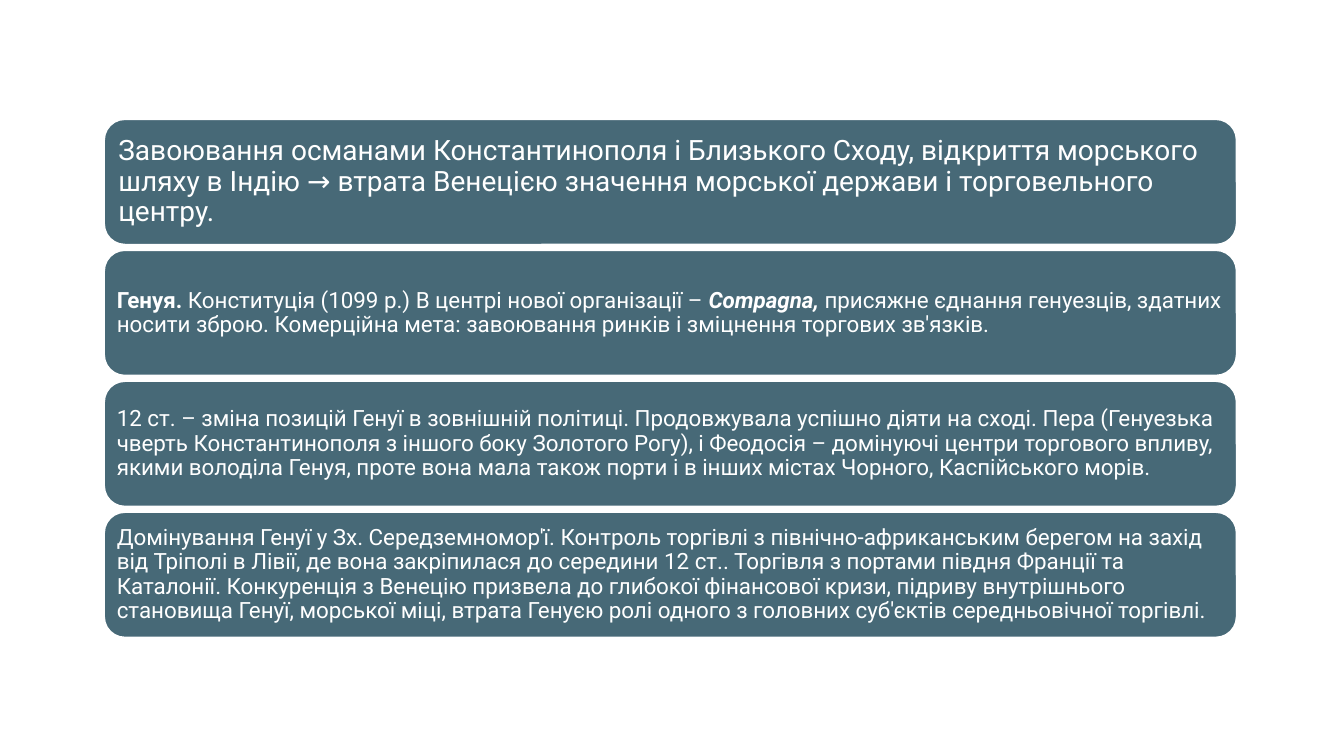
import pptx
import pptx.util
import pptx.dml.color
import pptx.enum.shapes
import pptx.enum.text

Cm = pptx.util.Cm
Pt = pptx.util.Pt
COLORS = {
    name: pptx.dml.color.RGBColor.from_string(value)
    for name, value in {"card": "476977", "white": "FFFFFF"}.items()
}

LEFT, TOP, WIDTH, HEIGHT, PITCH = 2.62, 3.0, 28.55, 3.17, 3.3

cards = [
    (20, 0.21, [
        ("Завоювання османами Константинополя і Близького Сходу, відкриття морського "
         "шляху в Індію → втрата Венецією значення морської держави і торговельного "
         "центру.", False, False),
    ]),
    (16, 0.17, [
        ("Генуя.", True, False),
        (" Конституція (1099 р.) В центрі нової організації – ", False, False),
        ("Compagna,", True, True),
        (" присяжне єднання генуезців, здатних носити зброю. Комерційна мета: "
         "завоювання ринків і зміцнення торгових зв'язків.", False, False),
    ]),
    (16, 0.17, [
        ("12 ст. – зміна позицій Генуї в зовнішній політиці. Продовжувала успішно діяти "
         "на сході. Пера (Генуезька чверть Константинополя з іншого боку Золотого Рогу), "
         "і Феодосія – домінуючі центри торгового впливу, якими володіла Генуя, проте "
         "вона мала також порти і в інших містах Чорного, Каспійського морів.",
         False, False),
    ]),
    (16, 0.17, [
        ("Домінування Генуї у Зх. Середземномор'ї. Контроль торгівлі з "
         "північно-африканським берегом на захід від Тріполі в Лівії, де вона "
         "закріпилася до середини 12 ст.. Торгівля з портами півдня Франції та "
         "Каталонії. Конкуренція з Венецію призвела до глибокої фінансової кризи, "
         "підриву внутрішнього становища Генуї, морської міці, втрата Генуєю ролі "
         "одного з головних суб'єктів середньовічної торгівлі.", False, False),
    ]),
]

presentation = pptx.Presentation()
presentation.slide_width = Cm(33.87)
presentation.slide_height = Cm(19.05)
slide = presentation.slides.add_slide(presentation.slide_layouts[6])

for index, (size, inset, parts) in enumerate(cards):
    shape = slide.shapes.add_shape(
        pptx.enum.shapes.MSO_SHAPE.ROUNDED_RECTANGLE,
        Cm(LEFT), Cm(TOP + index * PITCH), Cm(WIDTH), Cm(HEIGHT))
    shape.shadow.inherit = False
    shape.fill.solid()
    shape.fill.fore_color.rgb = COLORS["card"]
    shape.line.color.rgb = COLORS["white"]
    shape.line.width = Pt(1.5)

    text_frame = shape.text_frame
    text_frame.word_wrap = True
    text_frame.vertical_anchor = pptx.enum.text.MSO_ANCHOR.MIDDLE
    text_frame.margin_left = text_frame.margin_right = Cm(inset)
    text_frame.margin_top = text_frame.margin_bottom = Cm(inset)

    paragraph = text_frame.paragraphs[0]
    paragraph.alignment = pptx.enum.text.PP_ALIGN.LEFT
    paragraph.line_spacing = 0.9
    for text, bold, italic in parts:
        run = paragraph.add_run()
        run.text = text
        run.font.name = "Roboto"
        run.font.size = Pt(size)
        run.font.bold = bold
        run.font.italic = italic
        run.font.color.rgb = COLORS["white"]

presentation.save("out.pptx")
